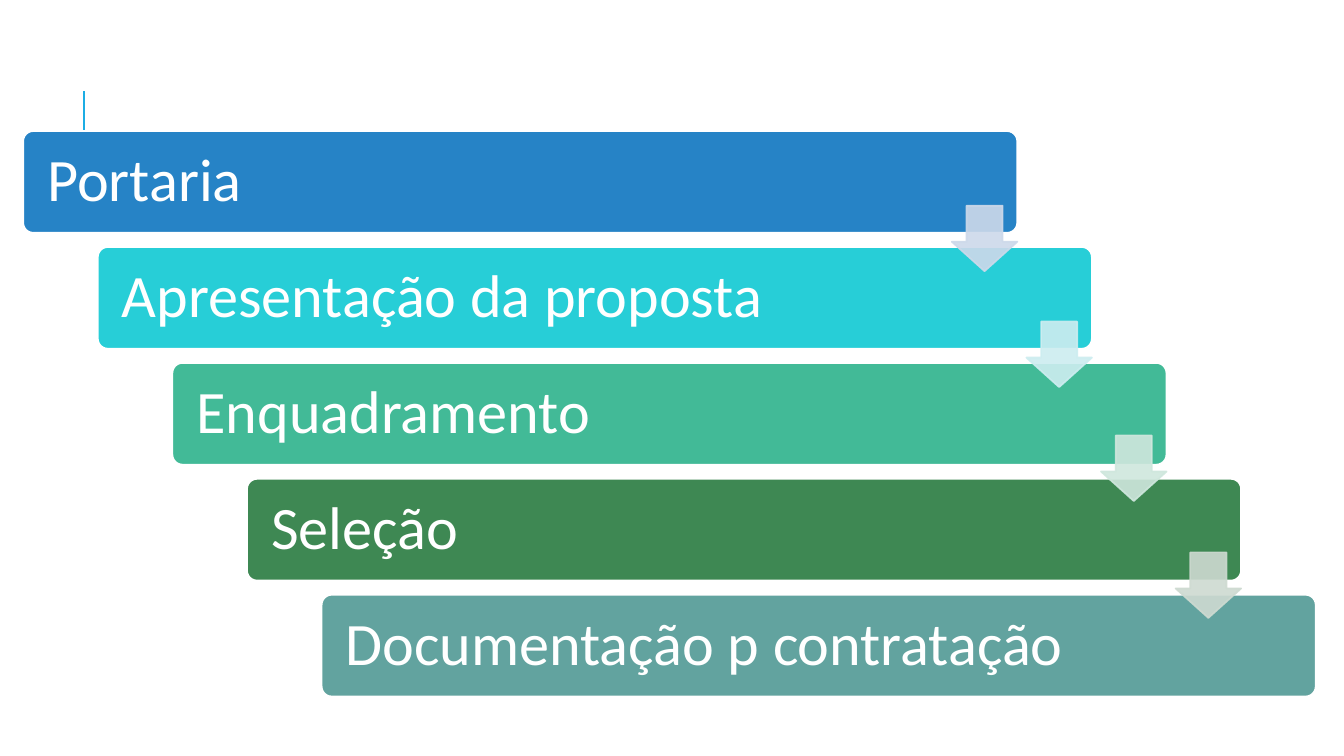
from lxml import etree
from pptx import Presentation
from pptx.dml.color import RGBColor
from pptx.enum.shapes import MSO_CONNECTOR, MSO_SHAPE
from pptx.enum.text import MSO_ANCHOR, PP_ALIGN
from pptx.oxml.ns import qn
from pptx.util import Inches, Pt

STRAIGHT = MSO_CONNECTOR.STRAIGHT
ROUNDED = MSO_SHAPE.ROUNDED_RECTANGLE
DOWN_ARROW = MSO_SHAPE.DOWN_ARROW
MIDDLE = MSO_ANCHOR.MIDDLE
LEFT = PP_ALIGN.LEFT


def rgb(color):
    return RGBColor.from_string(color)


def add_block(kind, left, top, width, height, fill, line, adjustments):
    block = slide.shapes.add_shape(
        kind, Inches(left), Inches(top), Inches(width), Inches(height))
    block.shadow.inherit = False
    block.fill.solid()
    block.fill.fore_color.rgb = rgb(fill)
    block.line.color.rgb = rgb(line)
    block.line.width = Pt(1.25)
    for index, value in enumerate(adjustments):
        block.adjustments[index] = value
    return block


prs = Presentation()
prs.slide_width = Inches(13.33)
prs.slide_height = Inches(7.5)
slide = prs.slides.add_slide(prs.slide_layouts[6])

# Accent line behind the steps
accent = slide.shapes.add_connector(
    STRAIGHT, Inches(0.83), Inches(1.9), Inches(0.83), Inches(0.9))
accent.line.color.rgb = rgb("1CADE4")
accent.line.width = Pt(1.5)
etree.SubElement(accent._element.spPr, qn("a:effectLst"))

# Staircase of steps
steps = [
    ("Portaria", "2683C6"),
    ("Apresentação da proposta", "27CED7"),
    ("Enquadramento", "42BA97"),
    ("Seleção", "3E8853"),
    ("Documentação p contratação", "62A39F"),
]
STEP_X, STEP_Y = 0.74, 1.15

for i, (label, color) in enumerate(steps):
    step = add_block(ROUNDED, 0.23 + i * STEP_X, 1.3 + i * STEP_Y, 9.86, 1.01,
                     color, "FFFFFF", [0.1])
    frame = step.text_frame
    frame.word_wrap = True
    frame.vertical_anchor = MIDDLE
    frame.margin_left = frame.margin_right = Inches(0.21)
    frame.margin_top = frame.margin_bottom = Inches(0)
    paragraph = frame.paragraphs[0]
    paragraph.alignment = LEFT
    paragraph.line_spacing = 0.9
    run = paragraph.add_run()
    run.text = label
    run.font.name = "Calibri"
    run.font.size = Pt(43)
    run.font.color.rgb = rgb("FFFFFF")

# Translucent arrows from each step to the next
arrows = [("CDD9EA", 2.04), ("CDEDF0", 3.19), ("CFE7DD", 4.32), ("CEDAD1", 5.48)]
for i, (color, top) in enumerate(arrows):
    arrow = add_block(DOWN_ARROW, 9.44 + i * STEP_X, top, 0.65, 0.65,
                      color, color, [0.55, 0.45])
    for tint in arrow._element.spPr.iter(qn("a:srgbClr")):
        etree.SubElement(tint, qn("a:alpha"), val="90000")

prs.save("out.pptx")
